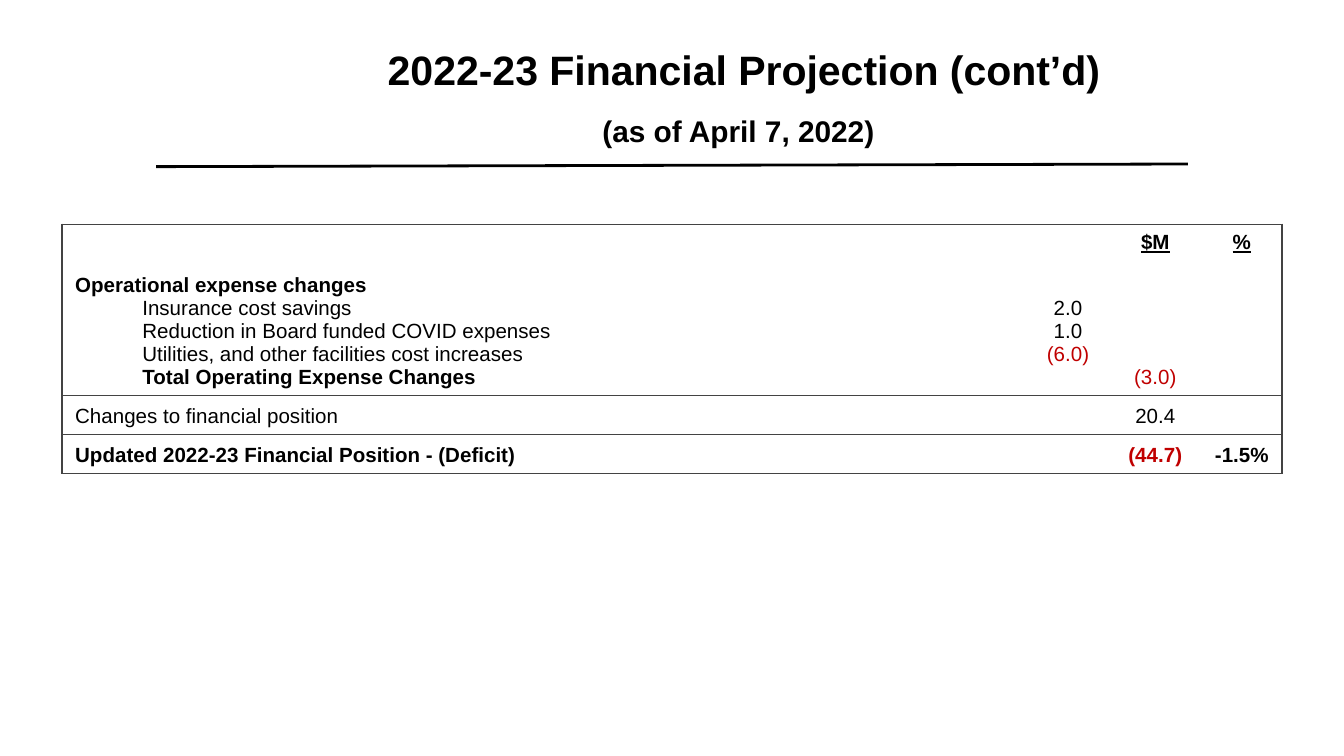
"""Build the 2022-23 financial projection slide."""
import lxml.etree
import pptx
import pptx.dml.color
import pptx.enum.shapes
import pptx.enum.text
import pptx.oxml.ns
import pptx.util

Cm = pptx.util.Cm
Pt = pptx.util.Pt
qn = pptx.oxml.ns.qn
ALIGN = pptx.enum.text.PP_ALIGN
ANCHOR = pptx.enum.text.MSO_ANCHOR

COLORS = {"text": "000000", "loss": "C00000", "border": "434343"}
FONT = "Arial"
BODY_SIZE = 11
NO_STYLE = "{2D5ABB26-0587-4C30-8999-92F81FD0307C}"

TITLE = ("2022-23 Financial Projection (cont’d)", 22)
SUBTITLE = [("(as of April 7, 2022)", 16), (" ", 22)]

COLUMN_WIDTHS = [18.24, 1.55, 1.75, 1.52]
ROW_HEIGHTS = [0.81, 2.42, 0.69, 0.69]
LINE_HEIGHT = 0.43
CELL_MARGIN = 0.13
INDENT = 1.27

PLAIN = {}
BOLD = {"bold": True}
LOSS = {"color": "loss"}
HEADING = {"bold": True, "underline": True}
ITEM = {"indent": INDENT}

ROWS = [
    [[], [], [("$M", HEADING)], [("%", HEADING)]],
    [
        [
            ("Operational expense changes", BOLD),
            ("Insurance cost savings", ITEM),
            ("Reduction in Board funded COVID expenses", ITEM),
            ("Utilities, and other facilities cost increases", ITEM),
            ("Total Operating Expense Changes", {**ITEM, **BOLD}),
        ],
        [("2.0", PLAIN), ("1.0", PLAIN), ("(6.0)", LOSS)],
        [("(3.0)", LOSS)],
        [],
    ],
    [[("Changes to financial position", PLAIN)], [], [("20.4", PLAIN)], []],
    [
        [("Updated 2022-23 Financial Position - (Deficit)", BOLD)],
        [],
        [("(44.7)", {**LOSS, **BOLD})],
        [("-1.5%", BOLD)],
    ],
]


def add_run(paragraph, text, size, color="text", bold=False, underline=False):
    run = paragraph.add_run()
    run.text = text
    font = run.font
    font.name, font.size, font.bold = FONT, Pt(size), bold
    if underline:
        font.underline = True
    font.color.rgb = pptx.dml.color.RGBColor.from_string(COLORS[color])


def add_title(slide):
    title = slide.shapes.title
    title.left, title.top, title.width, title.height = Cm(4.11), Cm(0.43), Cm(19.91), Cm(2.69)
    frame = title.text_frame
    frame.word_wrap = True
    frame.auto_size = pptx.enum.text.MSO_AUTO_SIZE.NONE
    frame.vertical_anchor = ANCHOR.MIDDLE
    frame.margin_left = frame.margin_right = frame.margin_top = frame.margin_bottom = Cm(0.25)
    paragraph = frame.paragraphs[0]
    paragraph.alignment = ALIGN.CENTER
    paragraph.line_spacing = 1.15
    add_run(paragraph, *TITLE, bold=True)
    paragraph.add_line_break()
    for text, size in SUBTITLE:
        add_run(paragraph, text, size, bold=True)


def add_rule(slide):
    rule = slide.shapes.add_connector(
        pptx.enum.shapes.MSO_CONNECTOR.STRAIGHT, Cm(2.95), Cm(3.15), Cm(22.45), Cm(3.1)
    )
    rule.line.width = Pt(1.5)
    rule.line.color.rgb = pptx.dml.color.RGBColor.from_string(COLORS["text"])
    lxml.etree.SubElement(rule._element.spPr, qn("a:effectLst"))


def set_borders(cell, sides):
    properties = cell._tc.get_or_add_tcPr()
    for side in ("L", "R", "T", "B"):
        if side in sides:
            line = lxml.etree.SubElement(properties, qn("a:ln" + side), w=str(Pt(0.75)))
            fill = lxml.etree.SubElement(line, qn("a:solidFill"))
            lxml.etree.SubElement(fill, qn("a:srgbClr"), val=COLORS["border"])


def fill_cell(cell, lines, is_label):
    frame = cell.text_frame
    if not lines:
        end = lxml.etree.SubElement(frame.paragraphs[0]._p, qn("a:endParaRPr"))
        end.set("sz", str(BODY_SIZE * 100))
    for index, (text, style) in enumerate(lines):
        paragraph = frame.paragraphs[0] if index == 0 else frame.add_paragraph()
        paragraph.alignment = ALIGN.LEFT if is_label else ALIGN.CENTER
        run_style = dict(style)
        indent = run_style.pop("indent", 0)
        if indent:
            properties = paragraph._p.get_or_add_pPr()
            properties.set("marL", str(Cm(indent)))
            properties.set("indent", "0")
        add_run(paragraph, text, BODY_SIZE, **run_style)


def add_projection_table(slide):
    frame = slide.shapes.add_table(
        len(ROWS), len(COLUMN_WIDTHS), Cm(1.17), Cm(4.24),
        Cm(sum(COLUMN_WIDTHS)), Cm(sum(ROW_HEIGHTS)),
    )
    table = frame.table
    table.first_row = table.horz_banding = False
    table._tbl.tblPr.find(qn("a:tableStyleId")).text = NO_STYLE
    for column, width in zip(table.columns, COLUMN_WIDTHS):
        column.width = Cm(width)
    last_column = len(COLUMN_WIDTHS) - 1
    for row_index, (row, height) in enumerate(zip(ROWS, ROW_HEIGHTS)):
        table.rows[row_index].height = Cm(height)
        for column_index, lines in enumerate(row):
            cell = table.cell(row_index, column_index)
            is_label = column_index == 0
            cell.margin_left = cell.margin_right = Cm(0.25 if is_label else CELL_MARGIN)
            cell.margin_top = cell.margin_bottom = Cm(CELL_MARGIN)
            cell.vertical_anchor = ANCHOR.TOP if row_index == 0 else ANCHOR.BOTTOM
            if len(lines) == 3:
                cell.margin_bottom = Cm(CELL_MARGIN + LINE_HEIGHT)
            sides = "T" if row_index == 0 else "B"
            if row_index > 1:
                sides += "T"
            if is_label:
                sides += "L"
            if column_index == last_column:
                sides += "R"
            set_borders(cell, sides)
            cell.fill.background()
            fill_cell(cell, lines, is_label)


def main():
    presentation = pptx.Presentation()
    presentation.slide_width, presentation.slide_height = Cm(25.4), Cm(14.29)
    slide = presentation.slides.add_slide(presentation.slide_layouts.get_by_name("Title Only"))
    add_title(slide)
    add_projection_table(slide)
    add_rule(slide)
    presentation.save("out.pptx")


if __name__ == "__main__":
    main()
